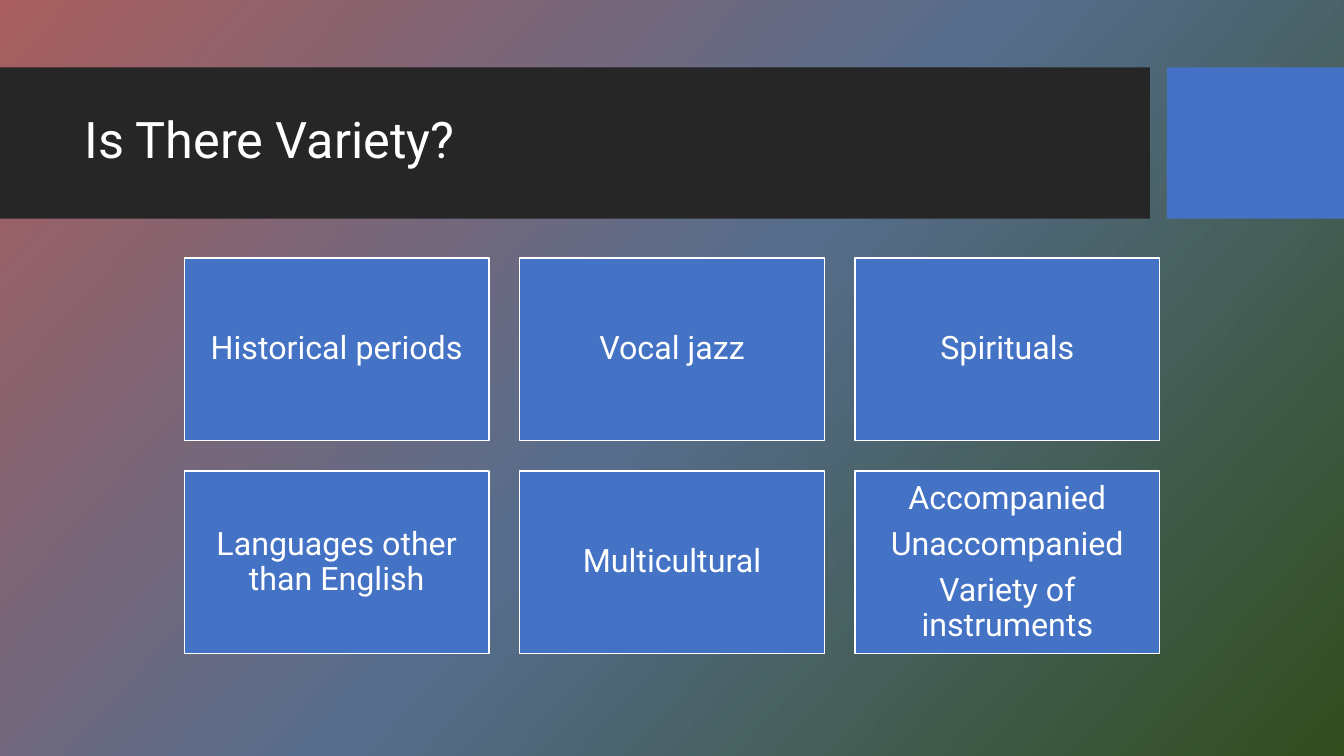
import copy
import dataclasses

import pptx
import pptx.dml.color
import pptx.enum.shapes
import pptx.enum.text
import pptx.oxml.ns
import pptx.util

Cm = pptx.util.Cm
Pt = pptx.util.Pt
Align = pptx.enum.text.PP_ALIGN


@dataclasses.dataclass(frozen=True)
class Theme:
    font: str = "Roboto"
    white: str = "FFFFFF"
    dark: str = "262626"
    blue: str = "4472C4"
    fade: tuple = ("A85E5E", "566D8C", "324D1E")
    angle: int = 42
    title: int = 36
    body: int = 23


@dataclasses.dataclass(frozen=True)
class Box:
    """A rectangle, in centimetres."""
    left: float
    top: float
    width: float
    height: float

    def place(self) -> tuple:
        return Cm(self.left), Cm(self.top), Cm(self.width), Cm(self.height)


@dataclasses.dataclass(frozen=True)
class Card:
    box: Box
    lines: tuple


THEME = Theme()
BAR = Box(0, 1.7, 28.98, 3.81)
TAB = Box(29.41, 1.7, 4.46, 3.81)
TITLE = Box(1.88, 2.08, 26.7, 3)
FIRST = Box(4.65, 6.5, 7.68, 4.6)
STEP_X, STEP_Y = 8.45, 5.37
COLS = 3
TOPICS = (
    ("Historical periods",),
    ("Vocal jazz",),
    ("Spirituals",),
    ("Languages other than English",),
    ("Multicultural",),
    ("Accompanied", "Unaccompanied", "Variety of instruments"),
)


def color(code: str) -> pptx.dml.color.RGBColor:
    return pptx.dml.color.RGBColor.from_string(code)


def write(shape, *lines: str, size: int, align=Align.LEFT, after: float = 0) -> None:
    """Fill a shape with one paragraph per line."""
    frame = shape.text_frame
    frame.word_wrap = True
    frame.vertical_anchor = pptx.enum.text.MSO_ANCHOR.MIDDLE
    frame.margin_left = frame.margin_right = Cm(0.25)
    frame.margin_top = frame.margin_bottom = Cm(0.25)
    frame.text = "\n".join(lines)
    for para in frame.paragraphs:
        para.alignment = align
        para.line_spacing = 0.9
        para.space_after = Pt(after)
        for run in para.runs:
            run.font.name = THEME.font
            run.font.size = Pt(size)
            run.font.color.rgb = color(THEME.white)


def block(slide, box: Box, fill: str, edge: str = ""):
    """Draw a filled rectangle, with an outline if an edge colour is given."""
    kind = pptx.enum.shapes.MSO_SHAPE.RECTANGLE
    shape = slide.shapes.add_shape(kind, *box.place())
    shape.shadow.inherit = False
    shape.fill.solid()
    shape.fill.fore_color.rgb = color(fill)
    if edge:
        shape.line.color.rgb = color(edge)
        shape.line.width = Pt(1)
    else:
        shape.line.fill.background()
    return shape


def paint(slide) -> None:
    """Set the three-colour diagonal background."""
    fill = slide.background.fill
    fill.gradient()
    fill.gradient_angle = 360 - THEME.angle
    stops = next(slide.element.iter(pptx.oxml.ns.qn("a:gsLst")))
    stops.insert(1, copy.deepcopy(stops[0]))
    for rank, (stop, code) in enumerate(zip(fill.gradient_stops, THEME.fade)):
        stop.color.rgb = color(code)
        stop.position = rank / (len(THEME.fade) - 1)


def draw(slide, card: Card) -> None:
    shape = block(slide, card.box, THEME.blue, edge=THEME.white)
    write(shape, *card.lines, size=THEME.body, align=Align.CENTER, after=8)


def main() -> None:
    deck = pptx.Presentation()
    deck.slide_width, deck.slide_height = Cm(33.87), Cm(19.05)
    slide = deck.slides.add_slide(deck.slide_layouts[6])
    paint(slide)

    # Title band
    block(slide, BAR, THEME.dark)
    block(slide, TAB, THEME.blue)
    title = slide.shapes.add_textbox(*TITLE.place())
    write(title, "Is There Variety?", size=THEME.title)

    # Grid of topics
    for rank, lines in enumerate(TOPICS):
        row, col = divmod(rank, COLS)
        box = dataclasses.replace(
            FIRST, left=FIRST.left + col * STEP_X, top=FIRST.top + row * STEP_Y
        )
        draw(slide, Card(box, lines))

    deck.save("out.pptx")


if __name__ == "__main__":
    main()
